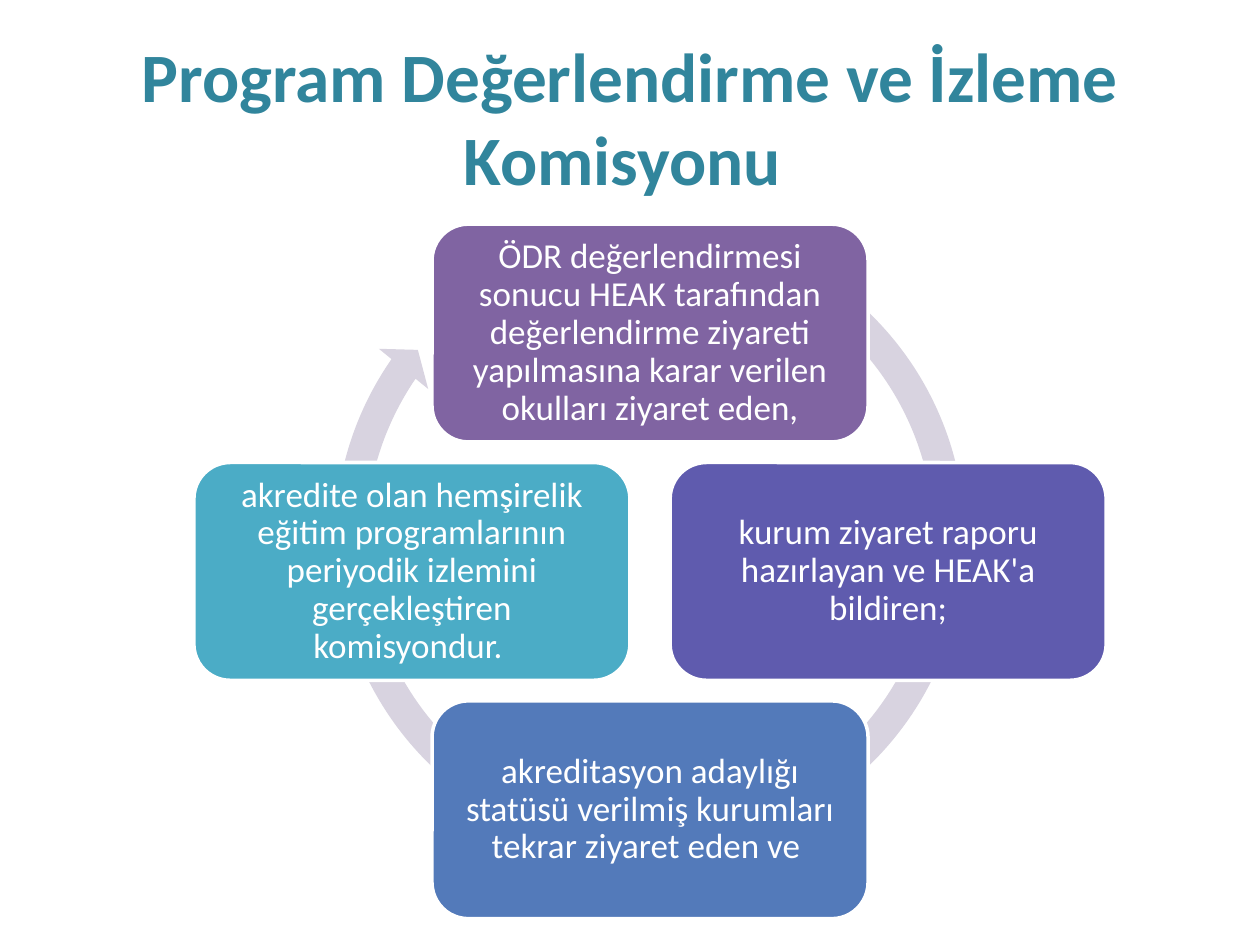
from pptx import Presentation
from pptx import util as u
from pptx.dml import color
from pptx.enum import shapes, text

NODE_WIDTH, NODE_HEIGHT = 8.79, 4.39
RING_SIZE, RING_RISE = 13.36, 0.33
RING_ADJUSTMENTS = (0.0467, 2.73, 128.78, 180, 0.048)

# Wording, fill and grid cell (column, row) of each step
STEPS = [
    ("ÖDR değerlendirmesi sonucu HEAK tarafından değerlendirme ziyareti "
     "yapılmasına karar verilen okulları ziyaret eden,", "8064A2", (1, 0)),
    ("kurum ziyaret raporu hazırlayan ve HEAK'a bildiren;", "5F5BAE", (2, 1)),
    ("akreditasyon adaylığı statüsü verilmiş kurumları tekrar ziyaret eden ve ",
     "537ABA", (1, 2)),
    ("akredite olan hemşirelik eğitim programlarının periyodik izlemini "
     "gerçekleştiren komisyondur. ", "4BACC6", (0, 1)),
]


def rgb(value):
    return color.RGBColor.from_string(value)


def write(shape, words, size, ink="FFFFFF", bold=False, spacing=1.0, insets=(0.25, 0.13)):
    frame = shape.text_frame
    frame.word_wrap = True
    frame.vertical_anchor = text.MSO_ANCHOR.MIDDLE
    frame.margin_left = frame.margin_right = u.Cm(insets[0])
    frame.margin_top = frame.margin_bottom = u.Cm(insets[1])
    para = frame.paragraphs[0]
    para.alignment = text.PP_ALIGN.CENTER
    para.line_spacing = spacing
    span = para.add_run()
    span.text = words
    span.font.name = "Calibri"
    span.font.size = u.Pt(size)
    span.font.bold = bold
    span.font.color.rgb = rgb(ink)


def add_preset(page, preset, left, top, width, height, fill, line=None):
    shape = page.shapes.add_shape(preset, *map(u.Cm, (left, top, width, height)))
    shape.shadow.inherit = False
    shape.fill.solid()
    shape.fill.fore_color.rgb = rgb(fill)
    if line:
        shape.line.color.rgb = rgb(line)
        shape.line.width = u.Pt(2)
    else:
        shape.line.fill.background()
    return shape


def add_title(page, left, top, width, height):
    box = page.shapes.add_textbox(*map(u.Cm, (left, top, width, height)))
    write(box, "Program Değerlendirme ve İzleme Komisyonu ", 39.6, ink="31859C", bold=True)


def add_cycle(page, left, top, width, height):
    # Ring arrow behind the steps
    ring = add_preset(page, shapes.MSO_SHAPE.CIRCULAR_ARROW,
                      left + (width - RING_SIZE) / 2, top - RING_RISE,
                      RING_SIZE, RING_SIZE, "D8D3E0")
    for index, value in enumerate(RING_ADJUSTMENTS):
        ring.adjustments[index] = value

    # Steps on a three by three grid
    step_x, step_y = (width - NODE_WIDTH) / 2, (height - NODE_HEIGHT) / 2
    for words, fill, (column, row) in STEPS:
        node = add_preset(page, shapes.MSO_SHAPE.ROUNDED_RECTANGLE,
                          left + column * step_x, top + row * step_y,
                          NODE_WIDTH, NODE_HEIGHT, fill, line="FFFFFF")
        write(node, words, 20, spacing=0.9, insets=(0.21, 0.21))


def main():
    deck = Presentation()
    deck.slide_width, deck.slide_height = u.Cm(25.4), u.Cm(19.05)
    page = deck.slides.add_slide(deck.slide_layouts[6])
    add_title(page, 1.27, 0.76, 22.86, 3.18)
    add_cycle(page, 3.91, 4.52, 18.39, 14)
    deck.save("out.pptx")


if __name__ == "__main__":
    main()
